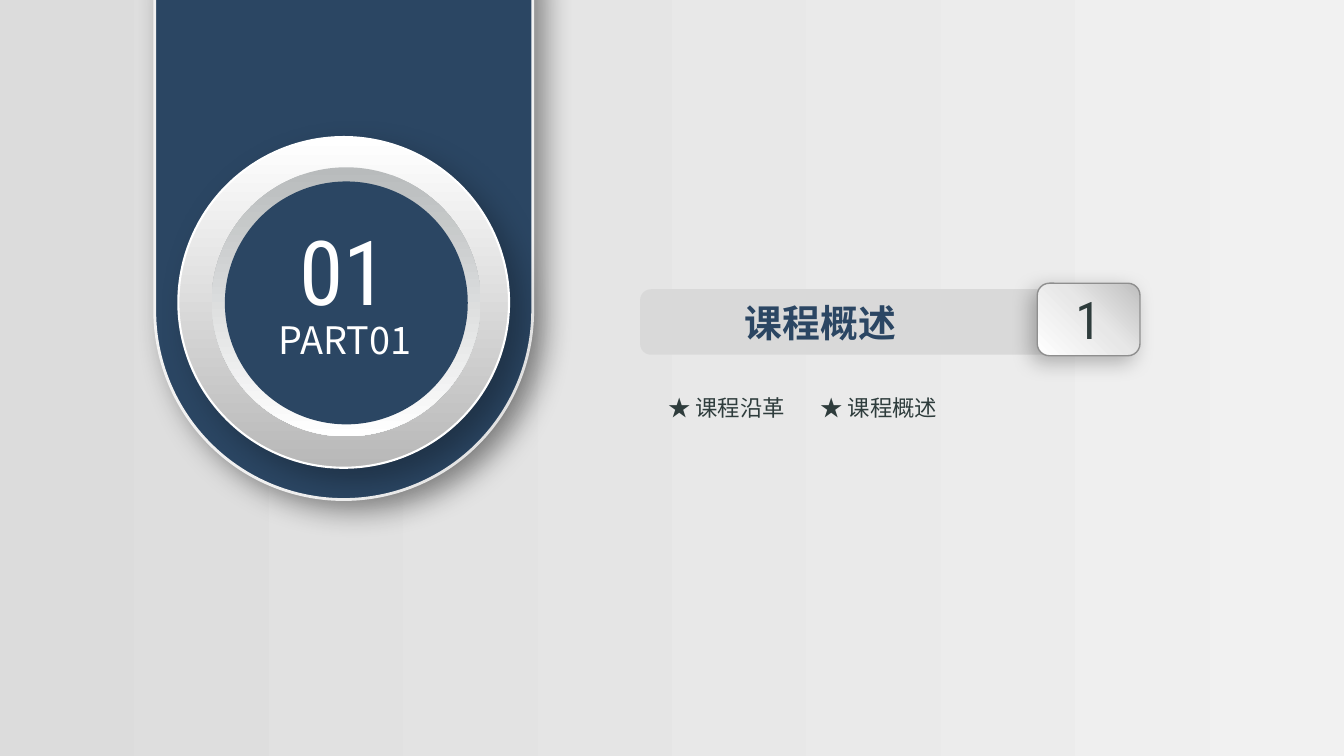
"""Build the opening slide of part one, the course overview."""
from lxml.etree import SubElement
from pptx import Presentation
from pptx.dml.color import RGBColor as RGB
from pptx.enum.shapes import MSO_SHAPE as Kind
from pptx.enum.text import MSO_ANCHOR as Anchor, PP_ALIGN as Align
from pptx.oxml.ns import qn
from pptx.util import Pt

NAVY = RGB(0x2B, 0x46, 0x63)
INK = RGB(0x2E, 0x3C, 0x3C)
WHITE = RGB(0xFF, 0xFF, 0xFF)
PALE = RGB(0xF2, 0xF2, 0xF2)
GREY = RGB(0x8F, 0x8F, 0x8F)
SILVER = RGB(0xD9, 0xD9, 0xD9)
CJK, ROMAN = "Noto Sans CJK SC", "Roboto Condensed"

BACK = ([(0, RGB(0xDC, 0xDC, 0xDC)), (100, RGB(0xF1, 0xF1, 0xF1))], 0)
SHINE = ([(0, WHITE), (55, RGB(0xE7, 0xE7, 0xE7)), (100, RGB(0xBF, 0xBF, 0xBF))], 315)
RIM = ([(0, WHITE), (100, RGB(0xB8, 0xB8, 0xB8))], 90)
GROOVE = ([(0, RGB(0xB8, 0xBB, 0xBC)), (100, WHITE)], 90)

# kind, box, turn, radius, fill, line, shadow (opacity, blur, distance, angle)
SHAPES = [
    (Kind.ROUNDED_RECTANGLE, (457.2, 206.6, 356.4, 46.8), 0, None, SILVER, None, None),
    (Kind.ROUNDED_RECTANGLE, (740.9, 202.3, 73.4, 51.8), 0, None, SHINE, (GREY, 1), (25, 15, 6, 135)),
    (Kind.ROUNDED_RECTANGLE, (-2.2, -25.9, 495.4, 270), 90, 0.5, NAVY, (PALE, 2), (40, 20, 10, 45)),
    (Kind.OVAL, (127.4, 97.9, 236.2, 236.2), 0, None, RIM, (WHITE, 1.5), (28, 22, 12, 45)),
    (Kind.OVAL, (151.2, 119.5, 192.2, 192.2), 0, None, GROOVE, None, None),
    (Kind.OVAL, (160.6, 129.6, 173.5, 173.5), 0, None, NAVY, None, None),
]
HEAD = ("课程概述", (522.7, 206.6, 289.4, 46.8), (9.4, 5), Align.LEFT, 27, CJK, NAVY)
TEXTS = [
    ("1", (759.6, 203.8, 35.3, 48.2), (0, 0), Align.CENTER, 37, ROMAN, INK),
    ("★ 课程沿革", (470.9, 277.9, 108, 25.9), (6.5, 2.9), Align.LEFT, 16, CJK, INK),
    ("★ 课程概述", (579.6, 277.9, 103.7, 25.9), (6.5, 2.9), Align.LEFT, 16, CJK, INK),
    ("PART01", (164.9, 221.8, 162.7, 41.8), (9.4, 5), Align.CENTER, 27, CJK, WHITE),
    ("01", (128.2, 149, 234.7, 87.1), (9.4, 5), Align.CENTER, 64, ROMAN, WHITE),
]


def blend(fill, root, stops, angle):
    fill.gradient()
    fill.gradient_angle = -angle % 360
    ramp = next(root.iter(qn("a:gsLst")))
    for old in list(ramp):
        ramp.remove(old)
    for place, tone in stops:
        stop = SubElement(ramp, qn("a:gs"), pos=str(place * 1000))
        SubElement(stop, qn("a:srgbClr"), val=str(tone))


def shade(shape, alpha, blur, dist, angle):
    effects = shape._element.spPr.find(qn("a:effectLst"))
    outer = SubElement(effects, qn("a:outerShdw"), blurRad=str(Pt(blur)), dist=str(Pt(dist)),
                       dir=str(angle * 60000), algn="ctr", rotWithShape="0")
    tone = SubElement(outer, qn("a:srgbClr"), val="000000")
    SubElement(tone, qn("a:alpha"), val=str(alpha * 1000))


def draw(slide, kind, box, turn, radius, paint, line, shadow):
    shape = slide.shapes.add_shape(kind, *map(Pt, box))
    shape.rotation = turn
    shape.shadow.inherit = False
    if radius is not None:
        shape.adjustments[0] = radius
    if isinstance(paint, RGB):
        shape.fill.solid()
        shape.fill.fore_color.rgb = paint
    else:
        blend(shape.fill, shape._element, *paint)
    if line:
        shape.line.color.rgb, shape.line.width = line[0], Pt(line[1])
    else:
        shape.line.fill.background()
    if shadow:
        shade(shape, *shadow)


def write(shape, text, box, inset, align, size, face, tone):
    shape.left, shape.top, shape.width, shape.height = map(Pt, box)
    frame = shape.text_frame
    frame.word_wrap = True
    frame.vertical_anchor = Anchor.MIDDLE
    frame.margin_left = frame.margin_right = Pt(inset[0])
    frame.margin_top = frame.margin_bottom = Pt(inset[1])
    para = frame.paragraphs[0]
    para.alignment = align
    para.line_spacing = 1.0
    run = para.add_run()
    run.text = text
    font = run.font
    font.size, font.name, font.color.rgb = Pt(size), face, tone
    SubElement(run._r.get_or_add_rPr(), qn("a:ea"), typeface=face)
    return font


def main():
    deck = Presentation()
    deck.slide_width, deck.slide_height = Pt(960), Pt(540)
    slide = deck.slides.add_slide(deck.slide_layouts[5])
    blend(slide.background.fill, slide._element, *BACK)
    for item in SHAPES:
        draw(slide, *item)
    title = slide.shapes.title
    write(title, *HEAD).bold = True
    slide.shapes._spTree.append(title._element)
    for item in TEXTS:
        write(slide.shapes.add_textbox(*map(Pt, item[1])), *item)
    deck.save("out.pptx")


if __name__ == "__main__":
    main()
